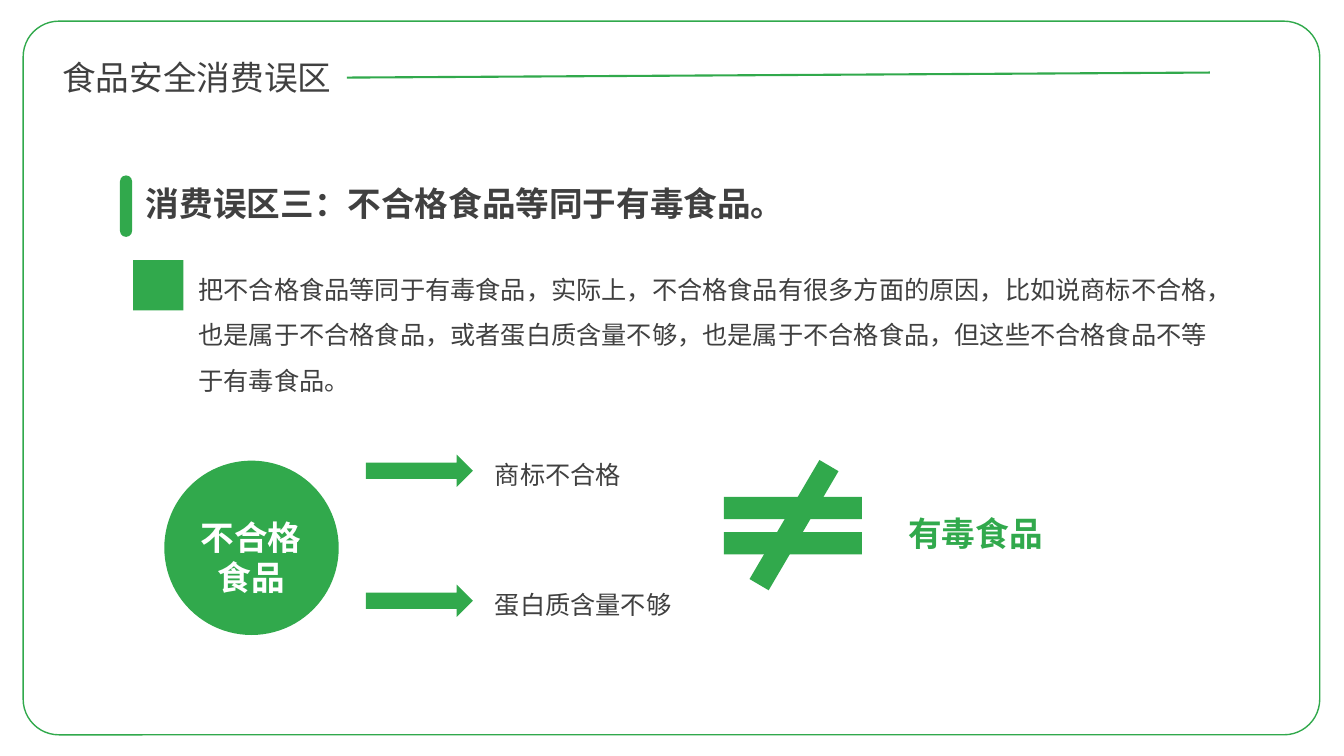
from dataclasses import dataclass

from lxml import etree
from pptx import Presentation
from pptx.dml.color import RGBColor
from pptx.enum.shapes import MSO_CONNECTOR, MSO_SHAPE
from pptx.enum.text import MSO_ANCHOR, PP_ALIGN
from pptx.oxml.ns import qn
from pptx.util import Pt

STRAIGHT = MSO_CONNECTOR.STRAIGHT
RECTANGLE = MSO_SHAPE.RECTANGLE
ROUNDED = MSO_SHAPE.ROUNDED_RECTANGLE
OVAL = MSO_SHAPE.OVAL
RIGHT_ARROW = MSO_SHAPE.RIGHT_ARROW
TOP = MSO_ANCHOR.TOP
LEFT = PP_ALIGN.LEFT
CENTER = PP_ALIGN.CENTER
JUSTIFY = PP_ALIGN.JUSTIFY

EMU_PER_PX = 9144


@dataclass(frozen=True)
class Theme:
    green: RGBColor = RGBColor(0x31, 0xA9, 0x4C)
    ink: RGBColor = RGBColor(0x40, 0x40, 0x40)
    white: RGBColor = RGBColor(0xFF, 0xFF, 0xFF)
    font: str = "Noto Sans CJK SC"
    heading: int = 24
    body: int = 18
    body_spacing: float = 1.5


THEME = Theme()


def px(length):
    return length * EMU_PER_PX


def add_solid(slide, kind, left, top, width, height, fill=THEME.green):
    shape = slide.shapes.add_shape(kind, px(left), px(top), px(width), px(height))
    shape.shadow.inherit = False
    shape.fill.solid()
    shape.fill.fore_color.rgb = fill
    shape.line.fill.background()
    return shape


def add_text(slide, text, left, top, width, height, size=THEME.body,
             color=THEME.ink, bold=False, align=LEFT, spacing=1.0, wrap=True):
    box = slide.shapes.add_textbox(px(left), px(top), px(width), px(height))
    frame = box.text_frame
    frame.word_wrap = wrap
    frame.vertical_anchor = TOP
    frame.text = text
    paragraph = frame.paragraphs[0]
    paragraph.alignment = align
    paragraph.line_spacing = spacing
    run = paragraph.runs[0]
    run.font.size = Pt(size)
    run.font.bold = bold
    run.font.color.rgb = color
    run.font.name = THEME.font
    east_asian = etree.SubElement(run.font._element, qn("a:ea"))
    east_asian.set("typeface", THEME.font)


def add_frame(slide, left, top, width, height):
    frame = add_solid(slide, ROUNDED, left, top, width, height, THEME.white)
    frame.adjustments[0] = 0.05
    frame.line.color.rgb = THEME.green
    frame.line.width = Pt(1)


def add_header(slide, left, top, width, height):
    title_width = 292
    add_text(slide, "食品安全消费误区", left, top, title_width, height,
             size=THEME.heading, align=JUSTIFY)
    rule = slide.shapes.add_connector(
        STRAIGHT, px(left + title_width), px(top + 25), px(left + width), px(top + 20))
    rule.line.color.rgb = THEME.green
    rule.line.width = Pt(1.5)
    etree.SubElement(rule._element.spPr, qn("a:effectLst"))


def add_heading(slide, left, top, width, height):
    bar = add_solid(slide, ROUNDED, left, top, 12, height)
    bar.adjustments[0] = 0.5
    add_text(slide, "消费误区三：不合格食品等同于有毒食品。", left + 16, top + 3,
             width - 16, 50, size=THEME.heading, bold=True, wrap=False)


def add_explanation(slide, left, top, width, height):
    add_solid(slide, RECTANGLE, left, top + 6, 50, 50)
    add_text(slide,
             "把不合格食品等同于有毒食品，实际上，不合格食品有很多方面的原因，"
             "比如说商标不合格，也是属于不合格食品，或者蛋白质含量不够，"
             "也是属于不合格食品，但这些不合格食品不等于有毒食品。",
             left + 55, top, width - 55, height, spacing=THEME.body_spacing)


def add_causes(slide, left, top, width, height):
    diameter = 173
    circle_top = top + 21
    add_solid(slide, OVAL, left, circle_top, diameter, diameter)
    add_text(slide, "不合格食品", left + 16, circle_top + 51, 140, 91,
             size=THEME.heading, color=THEME.white, bold=True, align=CENTER)
    label_height = 50
    step = height - label_height
    for index, cause in enumerate(("商标不合格", "蛋白质含量不够")):
        row_top = top + index * step
        add_solid(slide, RIGHT_ARROW, left + 200, row_top + 15, 106, 32)
        add_text(slide, cause, left + 318, row_top, width - 318, label_height,
                 spacing=THEME.body_spacing)


def add_not_equal(slide, left, top, width, height):
    thickness = 22
    slash_top = top + (height - thickness) // 2
    for bar_top in (top, top + height - thickness):
        add_solid(slide, RECTANGLE, left, bar_top, width, thickness)
    slash = add_solid(slide, RECTANGLE, left + 1, slash_top, width, thickness)
    slash.rotation = 120.4


def add_conclusion(slide, left, top, width, height):
    add_text(slide, "有毒食品", left, top, width, height, size=THEME.heading,
             color=THEME.green, bold=True, spacing=THEME.body_spacing)


def main():
    presentation = Presentation()
    presentation.slide_width = px(1333)
    presentation.slide_height = px(750)
    slide = presentation.slides.add_slide(presentation.slide_layouts[6])
    add_frame(slide, 23, 21, 1286, 708)
    add_header(slide, 52, 52, 1148, 50)
    add_heading(slide, 119, 174, 676, 61)
    add_explanation(slide, 132, 252, 1092, 141)
    add_causes(slide, 163, 436, 545, 179)
    add_not_equal(slide, 718, 493, 137, 57)
    add_conclusion(slide, 891, 484, 217, 64)
    presentation.save("out.pptx")


if __name__ == "__main__":
    main()
